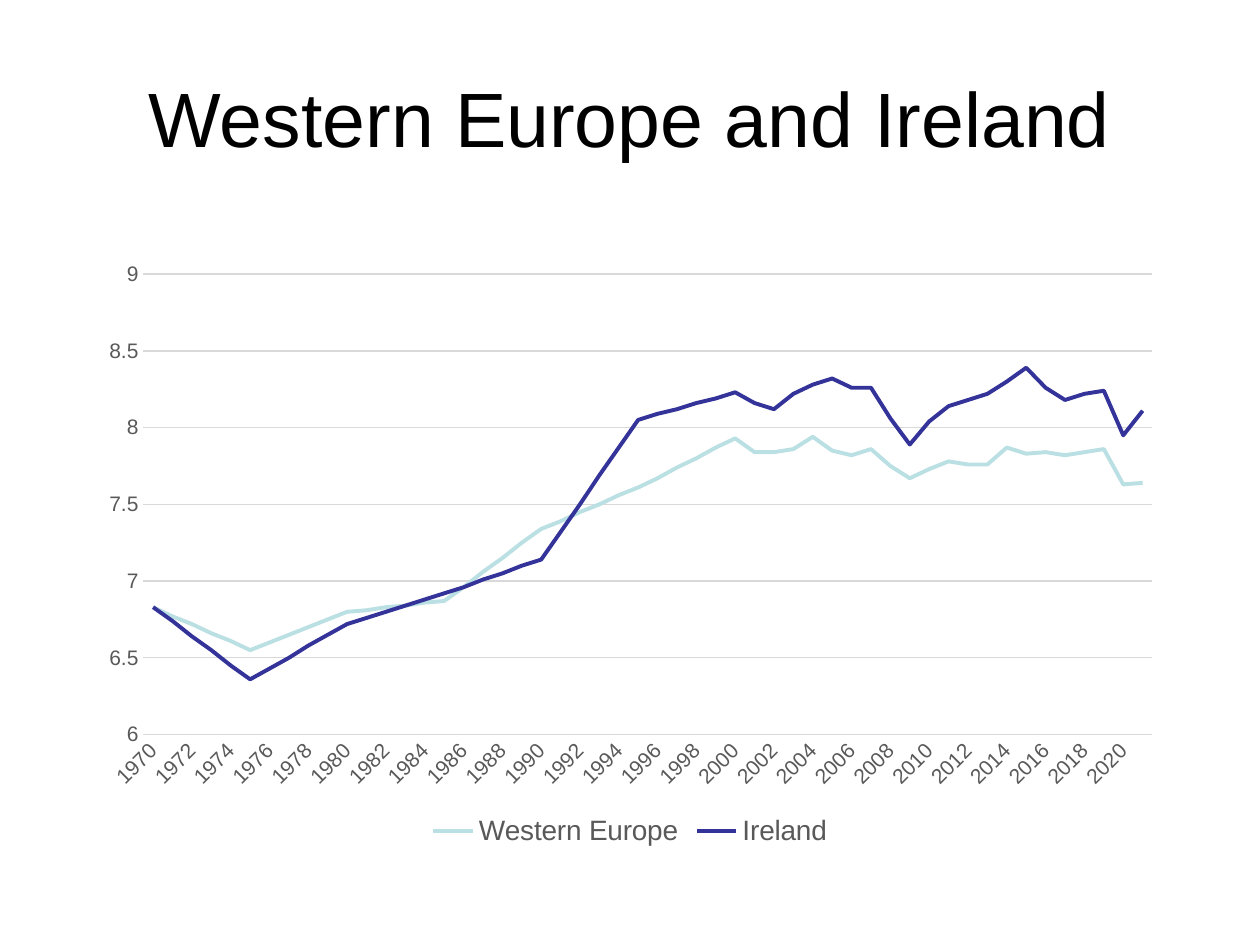
from lxml import etree
from pptx import Presentation
from pptx.chart.data import CategoryChartData
from pptx.dml.color import RGBColor
from pptx.enum.chart import XL_CHART_TYPE, XL_LEGEND_POSITION, XL_TICK_MARK
from pptx.enum.text import MSO_ANCHOR, PP_ALIGN
from pptx.oxml.ns import qn
from pptx.util import Pt

LINE = XL_CHART_TYPE.LINE
BOTTOM = XL_LEGEND_POSITION.BOTTOM
NONE = XL_TICK_MARK.NONE
MIDDLE = MSO_ANCHOR.MIDDLE
CENTER = PP_ALIGN.CENTER
FONT, GREY, PALE = "Arial", "595959", "D9D9D9"
START, STEP, END = 1970, 5, 2021
FRAME = {"x": 0.052, "y": 0.037, "w": 0.929, "h": 0.768}

# Each series: name, colour, five-yearly values to 2000, yearly values from 2001
SERIES = [
    ("Western Europe", "BBE0E3",
     [6.83, 6.55, 6.8, 6.87, 7.34, 7.61, 7.93],
     [7.84, 7.84, 7.86, 7.94, 7.85, 7.82, 7.86, 7.75, 7.67, 7.73, 7.78,
      7.76, 7.76, 7.87, 7.83, 7.84, 7.82, 7.84, 7.86, 7.63, 7.64]),
    ("Ireland", "333399",
     [6.83, 6.36, 6.72, 6.92, 7.14, 8.05, 8.23],
     [8.16, 8.12, 8.22, 8.28, 8.32, 8.26, 8.26, 8.06, 7.89, 8.04, 8.14,
      8.18, 8.22, 8.3, 8.39, 8.26, 8.18, 8.22, 8.24, 7.95, 8.11]),
]


def color(value):
    """Turn a hex string into a colour."""
    return RGBColor.from_string(value)


def style(font, size, tint):
    """Set the face, size and colour of a font."""
    font.name = FONT
    font.size = Pt(size)
    font.color.rgb = color(tint)


def stroke(line, tint, width):
    """Set the colour and width of a line."""
    line.color.rgb = color(tint)
    line.width = Pt(width)


def fill_years(knots, tail):
    """Spread five-yearly values evenly over the years and add the yearly ones."""
    years = [round(a + (b - a) * i / STEP, 2)
             for a, b in zip(knots, knots[1:]) for i in range(STEP)]
    return years + knots[-1:] + tail


def add_title(slide, left, top, width, height):
    """Place the centred heading."""
    box = slide.shapes.add_textbox(Pt(left), Pt(top), Pt(width), Pt(height))
    frame = box.text_frame
    frame.word_wrap = True
    frame.vertical_anchor = MIDDLE
    para = frame.paragraphs[0]
    para.alignment = CENTER
    run = para.add_run()
    run.text = "Western Europe and Ireland"
    style(run.font, 44, "000000")


def set_frame(chart):
    """Fix the inner plot area as shares of the chart."""
    plot = chart.element.find(".//" + qn("c:plotArea"))
    layout = plot.find(qn("c:layout"))
    if layout is None:
        layout = etree.Element(qn("c:layout"))
        plot.insert(0, layout)
    manual = etree.SubElement(layout, qn("c:manualLayout"))
    parts = [("layoutTarget", "inner"), ("xMode", "edge"), ("yMode", "edge")]
    for name, value in parts + list(FRAME.items()):
        etree.SubElement(manual, qn("c:" + name)).set("val", str(value))


def set_axes(chart):
    """Style both axes, the gridlines and the slanted year labels."""
    years, scale = chart.category_axis, chart.value_axis
    for axis in (years, scale):
        axis.major_tick_mark = axis.minor_tick_mark = NONE
        style(axis.tick_labels.font, 12, GREY)
    stroke(years.format.line, PALE, 0.75)
    body = years._element.find(qn("c:txPr")).find(qn("a:bodyPr"))
    body.set("rot", "-2700000")
    skip = etree.Element(qn("c:tickLblSkip"))
    skip.set("val", "2")
    years._element.find(qn("c:noMultiLvlLbl")).addprevious(skip)
    scale.minimum_scale, scale.maximum_scale, scale.major_unit = 6, 9, 0.5
    scale.tick_labels.number_format = "General"
    scale.tick_labels.number_format_is_linked = False
    scale.format.line.fill.background()
    scale.has_major_gridlines = True
    stroke(scale.major_gridlines.format.line, PALE, 0.75)


def add_lines(slide, left, top, width, height):
    """Place the line chart with its legend."""
    data = CategoryChartData()
    data.categories = [str(year) for year in range(START, END + 1)]
    for name, _, knots, tail in SERIES:
        data.add_series(name, fill_years(knots, tail))
    chart = slide.shapes.add_chart(
        LINE, Pt(left), Pt(top), Pt(width), Pt(height), data).chart
    chart.has_title = False
    style(chart.font, 10, "000000")
    chart.has_legend = True
    chart.legend.position = BOTTOM
    chart.legend.include_in_layout = False
    style(chart.legend.font, 16, GREY)
    for line, (_, tint, _, _) in zip(chart.plots[0].series, SERIES):
        line.smooth = False
        stroke(line.format.line, tint, 2.25)
    chart.plots[0].vary_by_categories = False
    set_axes(chart)
    set_frame(chart)


def main():
    """Build and save the slide."""
    deck = Presentation()
    deck.slide_width, deck.slide_height = Pt(720), Pt(540)
    slide = deck.slides.add_slide(deck.slide_layouts[6])
    add_title(slide, 36, 21.6, 648, 90)
    add_lines(slide, 49.68, 144, 620.64, 342.72)
    deck.save("out.pptx")


if __name__ == "__main__":
    main()
